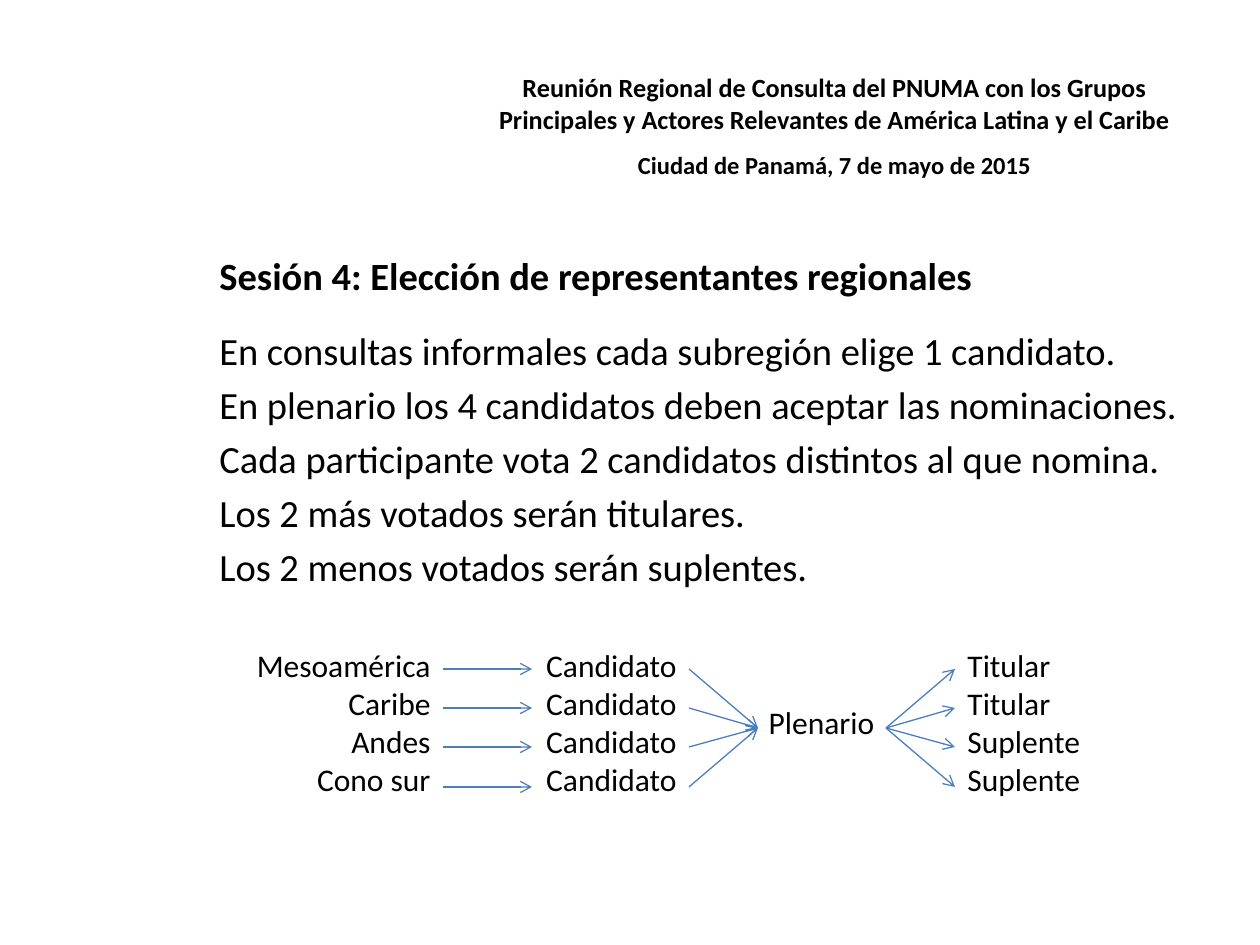
from dataclasses import dataclass

from lxml import etree
from pptx import Presentation
from pptx.dml.color import RGBColor
from pptx.enum.shapes import MSO_CONNECTOR
from pptx.enum.text import MSO_ANCHOR, MSO_AUTO_SIZE, PP_ALIGN
from pptx.oxml.ns import qn
from pptx.util import Pt

EMU_PER_PX = 914400 / 126
STRAIGHT = MSO_CONNECTOR.STRAIGHT
TOP, MIDDLE = MSO_ANCHOR.TOP, MSO_ANCHOR.MIDDLE
LEFT, CENTER, RIGHT = PP_ALIGN.LEFT, PP_ALIGN.CENTER, PP_ALIGN.RIGHT
NO_AUTOFIT = MSO_AUTO_SIZE.NONE
TITLE_ONLY = 5


@dataclass(frozen=True)
class Theme:
    """Colours, font and type sizes of the slide."""
    font: str = "Calibri"
    ink: RGBColor = RGBColor(0, 0, 0)
    arrow: RGBColor = RGBColor(0x4B, 0x7E, 0xBC)
    arrow_width: float = 0.75
    title_size: int = 15
    date_size: int = 14
    body_size: int = 22
    diagram_size: int = 18


THEME = Theme()
TITLE = ("Reunión Regional de Consulta del PNUMA con los Grupos "
         "Principales y Actores Relevantes de América Latina y el Caribe")
DATE = "Ciudad de Panamá, 7 de mayo de 2015"
SESSION = "Sesión 4: Elección de representantes regionales"
RULES = [
    "En consultas informales cada subregión elige 1 candidato.",
    "En plenario los 4 candidatos deben aceptar las nominaciones.",
    "Cada participante vota 2 candidatos distintos al que nomina.",
    "Los 2 más votados serán titulares.",
    "Los 2 menos votados serán suplentes.",
]
REGIONS = ["Mesoamérica", "Caribe", "Andes", "Cono sur"]
CANDIDATES = ["Candidato"] * len(REGIONS)
OUTCOMES = ["Titular"] * 2 + ["Suplente"] * 2

COLUMN_TOP, COLUMN_HEIGHT = 640, 165
ROW_CENTERS = [669 + 118 * row // 3 for row in range(len(REGIONS))]
PLENARY_CENTER = 728


def px(length):
    """Turn pixels into EMU."""
    return round(length * EMU_PER_PX)


def place(shape, left, top, width, height):
    """Set the position and size of a shape."""
    shape.left, shape.top = px(left), px(top)
    shape.width, shape.height = px(width), px(height)


def write_lines(shape, lines, size, align, anchor=TOP, bold=False):
    """Write one paragraph per line and return the paragraphs."""
    frame = shape.text_frame
    frame.word_wrap = True
    frame.auto_size = NO_AUTOFIT
    frame.vertical_anchor = anchor
    for index, line in enumerate(lines):
        paragraph = frame.add_paragraph() if index else frame.paragraphs[0]
        paragraph.alignment = align
        run = paragraph.add_run()
        run.text = line
        run.font.name = THEME.font
        run.font.size = Pt(size)
        run.font.bold = bold
        run.font.color.rgb = THEME.ink
    return frame.paragraphs


def add_text(slide, box, lines, size, align, **style):
    """Add a text box and return its paragraphs."""
    shape = slide.shapes.add_textbox(*map(px, box))
    return write_lines(shape, lines, size, align, **style)


def add_title(slide):
    """Place and fill the title placeholder."""
    place(slide.shapes.title, 472, 49, 725, 108)
    write_lines(slide.shapes.title, [TITLE], THEME.title_size, CENTER,
                anchor=MIDDLE, bold=True)


def add_body(slide):
    """Add the session heading and its rules."""
    heading, *rules = add_text(slide, (207, 246, 990, 374), [SESSION, *RULES],
                               THEME.body_size, LEFT)
    heading.runs[0].font.bold = True
    heading.space_after = Pt(12)
    for paragraph in rules:
        paragraph.space_before = Pt(THEME.body_size * 0.2)


def add_arrow(slide, start, end):
    """Add a straight arrow with an open head at its end."""
    arrow = slide.shapes.add_connector(STRAIGHT, *map(px, (*start, *end)))
    arrow.line.color.rgb = THEME.arrow
    arrow.line.width = Pt(THEME.arrow_width)
    line = arrow.line._get_or_add_ln()
    etree.SubElement(line, qn("a:tailEnd"), type="arrow")
    etree.SubElement(arrow._element.spPr, qn("a:effectLst"))


def add_diagram(slide):
    """Add the path from regions through the plenary to the outcomes."""
    columns = [(207, 236, REGIONS, RIGHT), (532, 157, CANDIDATES, RIGHT),
               (955, 236, OUTCOMES, LEFT)]
    for left, width, lines, align in columns:
        add_text(slide, (left, COLUMN_TOP, width, COLUMN_HEIGHT), lines,
                 THEME.diagram_size, align)
    add_text(slide, (743, 697, 157, 50), ["Plenario"],
             THEME.diagram_size, CENTER)
    for center in ROW_CENTERS:
        add_arrow(slide, (443, center), (532, center))
        add_arrow(slide, (689, center), (758, PLENARY_CENTER))
        add_arrow(slide, (886, PLENARY_CENTER), (955, center))


def main():
    """Build and save the slide."""
    presentation = Presentation()
    presentation.slide_width, presentation.slide_height = px(1260), px(945)
    layout = presentation.slide_layouts[TITLE_ONLY]
    slide = presentation.slides.add_slide(layout)
    add_title(slide)
    add_body(slide)
    date, = add_text(slide, (472, 98, 725, 118), [DATE], THEME.date_size,
                     CENTER, anchor=MIDDLE, bold=True)
    date.line_spacing = 1.5
    add_diagram(slide)
    presentation.save("out.pptx")


if __name__ == "__main__":
    main()
